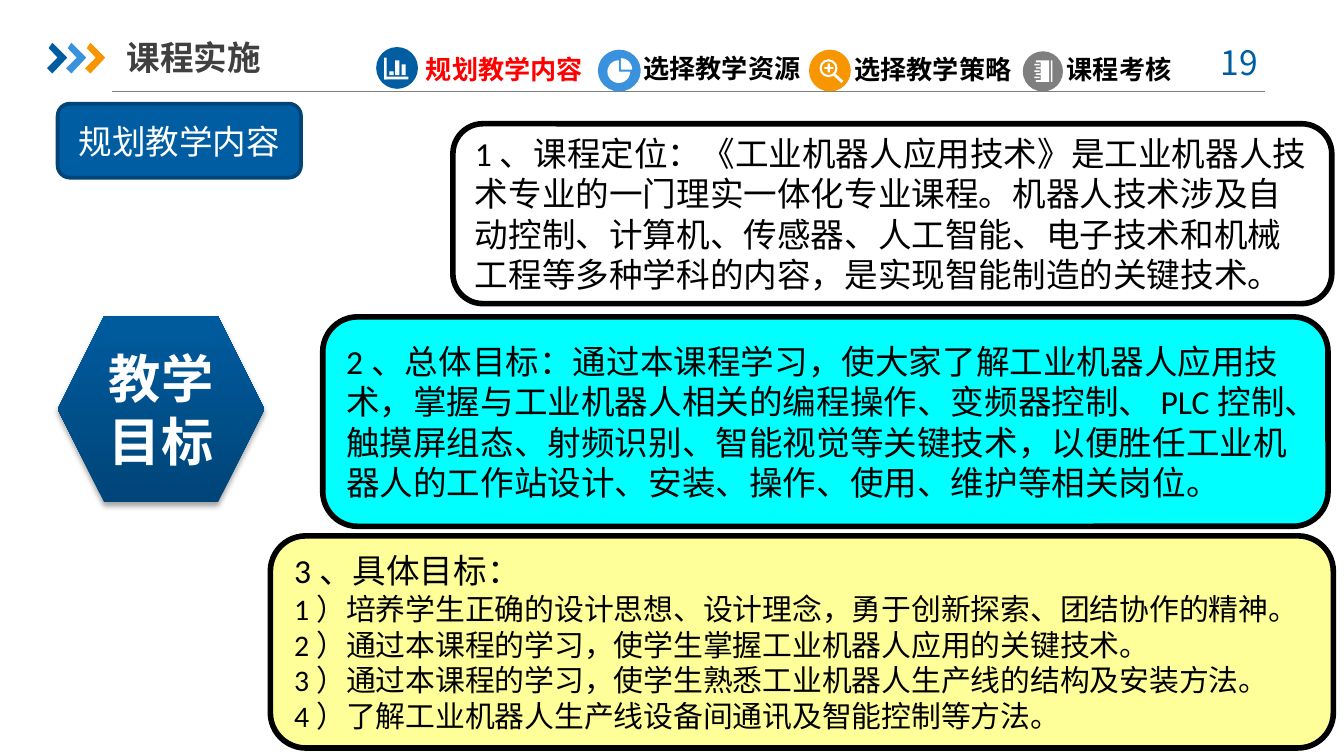
import pptx
import pptx.dml.color
import pptx.enum.dml
import pptx.enum.lang
import pptx.enum.shapes
import pptx.enum.text
import pptx.oxml
import pptx.oxml.ns
import pptx.util
from pptx.util import Cm

SHAPE = pptx.enum.shapes.MSO_SHAPE
ALIGN = pptx.enum.text.PP_ALIGN
MIDDLE = pptx.enum.text.MSO_ANCHOR.MIDDLE
CHINESE = "Noto Sans CJK SC"
NAMESPACE = pptx.oxml.ns.nsdecls("a")


def color(target, value):
    if hasattr(target, "solid"):
        target.solid()
        target = target.fore_color
    target.rgb = pptx.dml.color.RGBColor.from_string(value)


def write(box, text, size, value, font="Calibri", bold=False, align=ALIGN.LEFT):
    box.text_frame.text = text
    for para in box.text_frame.paragraphs:
        para.alignment = align
        for span in para.runs:
            span.font.size = pptx.util.Pt(size)
            span.font.bold = bold
            span.font.name = font
            span.font.language_id = pptx.enum.lang.MSO_LANGUAGE_ID.SIMPLIFIED_CHINESE
            color(span.font.fill, value)
            span._r.get_or_add_rPr().append(
                pptx.oxml.parse_xml(f'<a:ea {NAMESPACE} typeface="{CHINESE}"/>'))


deck = pptx.Presentation()
deck.slide_width = Cm(25.4)
deck.slide_height = Cm(14.29)
page = deck.slides.add_slide(deck.slide_layouts[1])
shapes = page.shapes

title = shapes.title
title.left, title.top, title.width, title.height = Cm(2.39), Cm(0.56), Cm(11.13), Cm(1.04)
title.text_frame.auto_size = pptx.enum.text.MSO_AUTO_SIZE.NONE
title.text_frame.vertical_anchor = MIDDLE
title.text_frame.margin_left = title.text_frame.margin_right = 0
write(title, "课程实施", 18, "404040", CHINESE, True)

rule = shapes.add_connector(
    pptx.enum.shapes.MSO_CONNECTOR.STRAIGHT, Cm(2.11), Cm(1.73), Cm(23.9), Cm(1.73))
handle = shapes.add_connector(
    pptx.enum.shapes.MSO_CONNECTOR.STRAIGHT, Cm(15.77), Cm(1.41), Cm(15.92), Cm(1.55))
for line, value, width in [(rule, "808080", 0.75), (handle, "FFFFFF", 1.5)]:
    color(line.line.fill, value)
    line.line.width = pptx.util.Pt(width)
    line._element.spPr.append(pptx.oxml.parse_xml(f"<a:effectLst {NAMESPACE}/>"))

chevron_points = [(0.03, 0.1), (0.1, 0), (0.38, 0.28), (0.1, 0.58), (0, 0.48), (0.2, 0.28)]
for index, value in enumerate(["005DA2", "3992DB", "F79600"]):
    left = 0.89 + 0.36 * index
    points = [(Cm(left + x), Cm(0.81 + y)) for x, y in chevron_points]
    builder = shapes.build_freeform(*points[0])
    builder.add_line_segments(points[1:])
    chevron = builder.convert_to_shape()
    color(chevron.fill, value)
    chevron.line.fill.background()
    chevron.shadow.inherit = False

icon_parts = [
    (SHAPE.OVAL, 7.11, 0.89, 0.79, 0.79, "005DA2"),
    (SHAPE.RECTANGLE, 7.26, 1.09, 0.05, 0.41, "FFFFFF"),
    (SHAPE.RECTANGLE, 7.26, 1.45, 0.46, 0.05, "FFFFFF"),
    (SHAPE.RECTANGLE, 7.36, 1.35, 0.08, 0.07, "FFFFFF"),
    (SHAPE.RECTANGLE, 7.47, 1.14, 0.08, 0.28, "FFFFFF"),
    (SHAPE.RECTANGLE, 7.59, 1.22, 0.08, 0.2, "FFFFFF"),
    (SHAPE.OVAL, 11.3, 0.94, 0.81, 0.79, "3992DB"),
    (SHAPE.PIE, 11.48, 1.14, 0.43, 0.43, "FFFFFF"),
    (SHAPE.PIE, 11.52, 1.1, 0.43, 0.43, "FFFFFF"),
    (SHAPE.OVAL, 15.29, 0.94, 0.79, 0.79, "F79600"),
    (SHAPE.DONUT, 15.49, 1.12, 0.34, 0.34, "FFFFFF"),
    (SHAPE.CROSS, 15.58, 1.2, 0.17, 0.17, "FFFFFF"),
    (SHAPE.OVAL, 19.33, 0.97, 0.76, 0.76, "7F7F7F"),
    (SHAPE.RECTANGLE, 19.58, 1.14, 0.25, 0.41, "FFFFFF"),
    (SHAPE.RECTANGLE, 19.86, 1.14, 0.03, 0.41, "FFFFFF"),
]
for index in range(3):
    ring_top = 1.21 + 0.12 * index
    icon_parts.append((SHAPE.RECTANGLE, 19.57, ring_top - 0.03, 0.1, 0.09, "7F7F7F"))
    icon_parts.append((SHAPE.RECTANGLE, 19.55, ring_top, 0.1, 0.03, "FFFFFF"))
pies = []
for preset, left, top, width, height, value in icon_parts:
    part = shapes.add_shape(preset, Cm(left), Cm(top), Cm(width), Cm(height))
    color(part.fill, value)
    part.line.fill.background()
    part.shadow.inherit = False
    if preset == SHAPE.PIE:
        pies.append(part)
    elif preset == SHAPE.DONUT:
        part.adjustments[0] = 0.12
    elif preset == SHAPE.CROSS:
        part.adjustments[0] = 0.38
pies[0].adjustments[0], pies[0].adjustments[1] = 0, 162
pies[1].adjustments[0], pies[1].adjustments[1] = 162, 0
shapes._spTree.append(handle._element)

labels = [
    ("规划教学内容", 7.8, 0.89, 3.51, "FF0000"),
    ("选择教学资源", 11.91, 0.86, 3.51, "000000"),
    ("选择教学策略", 15.9, 0.89, 3.51, "000000"),
    ("课程考核", 19.91, 0.89, 2.51, "000000"),
]
for text, left, top, width, value in labels:
    label = shapes.add_textbox(Cm(left), Cm(top), Cm(width), Cm(0.86))
    label.text_frame.word_wrap = False
    write(label, text, 14, value, bold=True)

number = shapes.add_textbox(Cm(22.5), Cm(0.66), Cm(1.85), Cm(1.02))
number.text_frame.word_wrap = True
write(number, "19", 18, "005DA2", CHINESE, align=ALIGN.CENTER)

hexagon = shapes.add_shape(SHAPE.HEXAGON, Cm(1.09), Cm(5.97), Cm(3.91), Cm(3.53))
hexagon.fill.gradient()
hexagon.fill.gradient_angle = 90
for stop, value in zip(hexagon.fill.gradient_stops, ["004579", "005B9E"]):
    color(stop.color, value)
hexagon.line.fill.background()
hexagon.shadow.inherit = False
hexagon._element.spPr.find(pptx.oxml.ns.qn("a:effectLst")).append(pptx.oxml.parse_xml(
    f'<a:outerShdw {NAMESPACE} blurRad="39400" dist="22900" dir="5400000" rotWithShape="0">'
    '<a:srgbClr val="000000"><a:alpha val="35000"/></a:srgbClr></a:outerShdw>'))
hexagon.text_frame.vertical_anchor = MIDDLE
write(hexagon, "教学\v目标", 28, "FFFFFF", CHINESE, True, ALIGN.CENTER)

positioning = (
    "1、课程定位：《工业机器人应用技术》是工业机器人技术专业的一门理实一体化专业课程。"
    "机器人技术涉及自动控制、计算机、传感器、人工智能、电子技术和机械工程等多种学科的内容，"
    "是实现智能制造的关键技术。")
overall_goal = (
    "2、总体目标：通过本课程学习，使大家了解工业机器人应用技术，"
    "掌握与工业机器人相关的编程操作、变频器控制、PLC控制、触摸屏组态、射频识别、智能视觉等关键技术，"
    "以便胜任工业机器人的工作站设计、安装、操作、使用、维护等相关岗位。")
specific_goals = "\n".join([
    "3、具体目标：",
    "1）培养学生正确的设计思想、设计理念，勇于创新探索、团结协作的精神。",
    "2）通过本课程的学习，使学生掌握工业机器人应用的关键技术。",
    "3）通过本课程的学习，使学生熟悉工业机器人生产线的结构及安装方法。",
    "4）了解工业机器人生产线设备间通讯及智能控制等方法。"])

goals = page.placeholders[1]
goals.left, goals.top, goals.width, goals.height = Cm(5.11), Cm(10.13), Cm(20.09), Cm(4.01)
goals._element.spPr.append(pptx.oxml.parse_xml(
    f'<a:prstGeom {NAMESPACE} prst="roundRect"><a:avLst/></a:prstGeom>'))
goals.text_frame.auto_size = pptx.enum.text.MSO_AUTO_SIZE.NONE
section = shapes.add_shape(SHAPE.ROUNDED_RECTANGLE, Cm(1.09), Cm(1.96), Cm(4.6), Cm(1.4))
course = shapes.add_shape(SHAPE.ROUNDED_RECTANGLE, Cm(8.56), Cm(2.34), Cm(16.61), Cm(3.4))
overall = shapes.add_shape(SHAPE.ROUNDED_RECTANGLE, Cm(6.1), Cm(5.99), Cm(19), Cm(3.96))
for box, fill, border, width in [
    (section, "005DA2", "004578", 2),
    (course, "FFFFFF", "000000", 3),
    (overall, "00FFFF", "000000", 3),
    (goals, "FFFF99", "000000", 3),
]:
    color(box.fill, fill)
    color(box.line.fill, border)
    box.line.width = pptx.util.Pt(width)
    box.text_frame.vertical_anchor = MIDDLE
    if box is not goals:
        box.shadow.inherit = False
write(section, "规划教学内容", 18, "FFFFFF", CHINESE, align=ALIGN.CENTER)
write(course, positioning, 18, "000000")
write(overall, overall_goal, 18, "000000")
write(goals, specific_goals, 16, "000000")
goals.text_frame.paragraphs[0].runs[0].font.size = pptx.util.Pt(18)
for para in goals.text_frame.paragraphs:
    properties = para._p.get_or_add_pPr()
    properties.set("marL", "0")
    properties.set("indent", "0")
    properties.append(pptx.oxml.parse_xml(f"<a:buNone {NAMESPACE}/>"))
    para.space_before = pptx.util.Pt(0)

deck.save("out.pptx")
